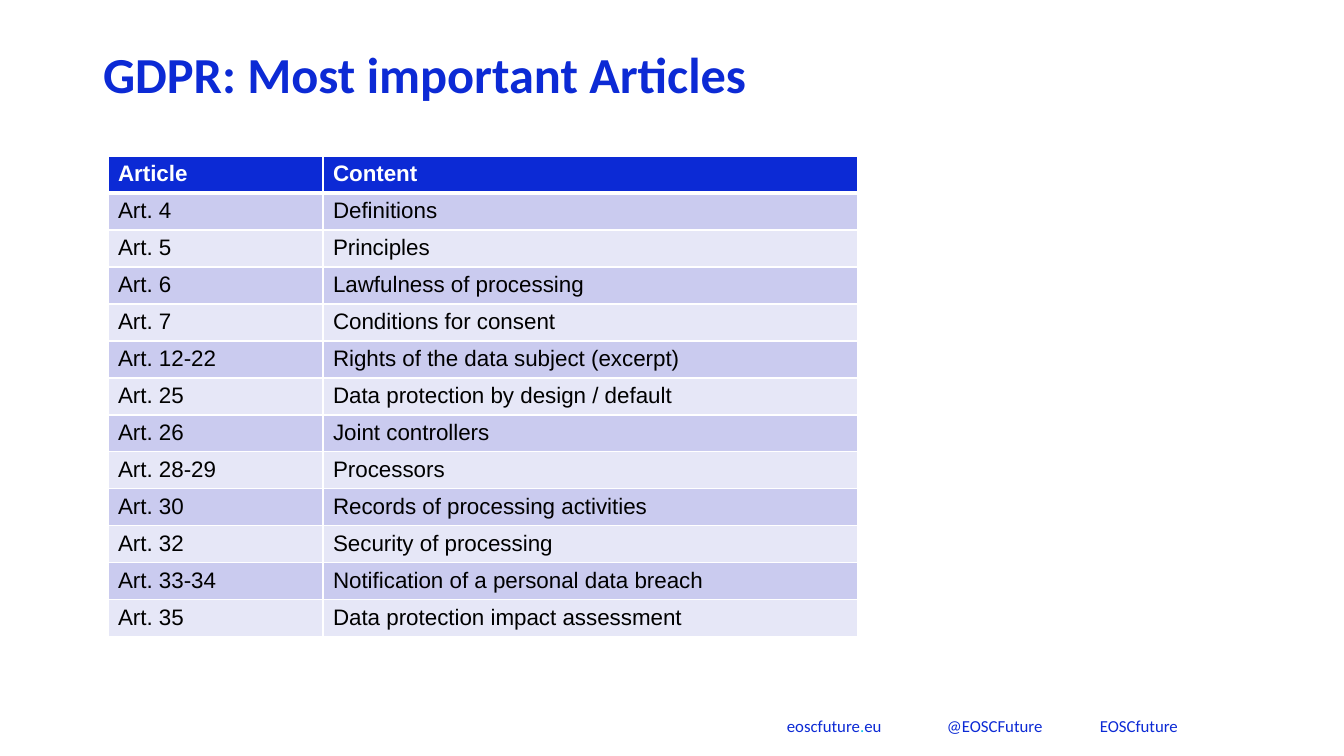
from lxml import etree
from pptx import Presentation
from pptx.dml.color import RGBColor
from pptx.enum.text import MSO_ANCHOR
from pptx.oxml.ns import qn
from pptx.util import Pt

TITLE = "GDPR: Most important Articles"
HEADER = ("Article", "Content")
ARTICLES = [
    ("Art. 4", "Definitions"),
    ("Art. 5", "Principles"),
    ("Art. 6", "Lawfulness of processing"),
    ("Art. 7", "Conditions for consent"),
    ("Art. 12-22", "Rights of the data subject (excerpt)"),
    ("Art. 25", "Data protection by design / default"),
    ("Art. 26", "Joint controllers"),
    ("Art. 28-29", "Processors"),
    ("Art. 30", "Records of processing activities"),
    ("Art. 32", "Security of processing"),
    ("Art. 33-34", "Notification of a personal data breach"),
    ("Art. 35", "Data protection impact assessment"),
]
CONTACTS = [
    ("eoscfuture", "blue"),
    (".", "cyan"),
    ("eu\t@EOSCFuture\tEOSCfuture", "blue"),
]
COLORS = {
    "blue": "0C2AD5",
    "cyan": "08C8E9",
    "white": "FFFFFF",
    "black": "000000",
    "dark band": "CACBEF",
    "light band": "E6E7F7",
}

# Lengths in px
SLIDE = (1344, 756)
TITLE_BOX = (93, 17, 1234, 120)
TABLE_LEFT, TABLE_TOP, TABLE_HEIGHT = 108, 156, 477
COLUMNS = (215, 535)
CONTACT_BOX = (777, 711, 424, 30)
CONTACT_TABS = (160, 313)


def px(length):
    return round(length * 914400 / 100.8)


def rgb(name):
    return RGBColor.from_string(COLORS[name])


def add_run(paragraph, text, face, size, color, bold=False):
    run = paragraph.add_run()
    run.text = text
    run.font.name = face
    run.font.size = Pt(size)
    run.font.bold = bold
    run.font.color.rgb = rgb(color)


def add_borders(cell, bottom):
    """Draw white borders, 1 pt wide except for the bottom one."""
    properties = cell._tc.get_or_add_tcPr()
    widths = {"a:lnL": 1, "a:lnR": 1, "a:lnT": 1, "a:lnB": bottom}
    for position, (side, width) in enumerate(widths.items()):
        line = etree.Element(qn(side), w=str(Pt(width)))
        fill = etree.SubElement(line, qn("a:solidFill"))
        etree.SubElement(fill, qn("a:srgbClr"), val=COLORS["white"])
        properties.insert(position, line)


def add_title(slide):
    title = slide.shapes.title
    title.left, title.top, title.width, title.height = map(px, TITLE_BOX)
    title.text_frame.vertical_anchor = MSO_ANCHOR.MIDDLE
    paragraph = title.text_frame.paragraphs[0]
    paragraph.alignment = 1
    paragraph.line_spacing = 0.9
    add_run(paragraph, TITLE, "Calibri", 36, "blue", bold=True)


def add_articles(slide):
    rows = [HEADER, *ARTICLES]
    table = slide.shapes.add_table(
        len(rows), len(COLUMNS), px(TABLE_LEFT), px(TABLE_TOP),
        px(sum(COLUMNS)), px(TABLE_HEIGHT)).table
    for column, width in zip(table.columns, COLUMNS):
        column.width = px(width)
    for r, texts in enumerate(rows):
        header = r == 0
        band = "blue" if header else "dark band" if r % 2 else "light band"
        for c, text in enumerate(texts):
            cell = table.cell(r, c)
            cell.fill.solid()
            cell.fill.fore_color.rgb = rgb(band)
            add_borders(cell, bottom=3 if header else 1)
            add_run(cell.text_frame.paragraphs[0], text, "Arial", 16,
                    "white" if header else "black", bold=header)


def add_contacts(slide):
    frame = slide.shapes.add_textbox(*map(px, CONTACT_BOX)).text_frame
    frame.word_wrap = True
    paragraph = frame.paragraphs[0]
    tabs = etree.SubElement(paragraph._p.get_or_add_pPr(), qn("a:tabLst"))
    for stop in CONTACT_TABS:
        etree.SubElement(tabs, qn("a:tab"), pos=str(px(stop)), algn="l")
    for text, color in CONTACTS:
        add_run(paragraph, text, "Calibri", 12, color)


def main():
    deck = Presentation()
    deck.slide_width, deck.slide_height = map(px, SLIDE)
    slide = deck.slides.add_slide(deck.slide_layouts[5])
    add_contacts(slide)
    add_title(slide)
    add_articles(slide)
    deck.save("out.pptx")


if __name__ == "__main__":
    main()
